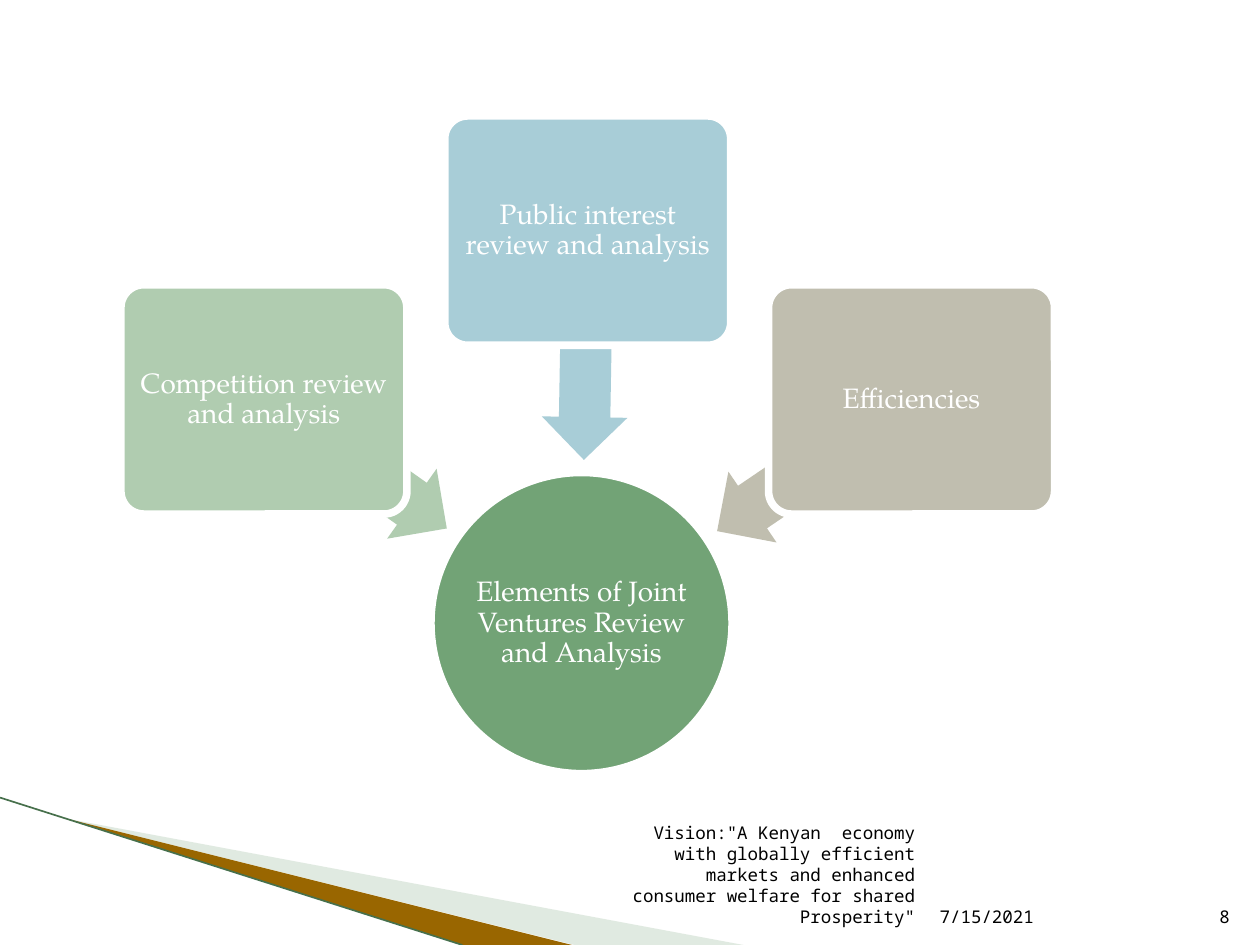
from lxml import etree
from pptx import Presentation
from pptx import util as u
from pptx.dml.color import RGBColor
from pptx.enum import shapes, text
from pptx.oxml.ns import qn

WHITE = RGBColor(0xFF, 0xFF, 0xFF)
BLACK = RGBColor(0, 0, 0)
HUB_GREEN = RGBColor(0x72, 0xA3, 0x76)
PALE_GREEN = RGBColor(0xB0, 0xCC, 0xB0)
BLUE = RGBColor(0xA8, 0xCD, 0xD7)
STONE = RGBColor(0xC0, 0xBE, 0xAF)
MIST = RGBColor(0xB3, 0xCB, 0xB5)
BROWN = RGBColor(0x99, 0x66, 0x00)
EDGE_GREEN = RGBColor(0x47, 0x70, 0x4C)
SERIF, MONO = "TeX Gyre Pagella", "Noto Sans Mono"


def inches(*lengths):
    """Convert numbers to inch lengths."""
    return [u.Inches(length) for length in lengths]


def write(frame, wording, inset, font, paragraph_format):
    """Fill a text frame with one formatted paragraph."""
    frame.word_wrap = True
    for side, gap in inset.items():
        setattr(frame, f"margin_{side}", u.Inches(gap))
    paragraph = frame.paragraphs[0]
    paragraph.text = wording
    for name, value in paragraph_format.items():
        setattr(paragraph, name, value)
    color = font.pop("color")
    for name, value in font.items():
        setattr(paragraph.font, name, value)
    paragraph.font.color.rgb = color


def add_filled(slide, preset, box, color):
    """Add a flat preset shape without an outline."""
    shape = slide.shapes.add_shape(preset, *inches(*box))
    shape.shadow.inherit = False
    shape.fill.solid()
    shape.fill.fore_color.rgb = color
    shape.line.fill.background()
    return shape


def add_node(slide, preset, box, color, wording, inset):
    """Add a white-rimmed shape with centred wording."""
    node = add_filled(slide, preset, box, color)
    node.line.color.rgb = WHITE
    node.line.width = u.Pt(4.33)
    node.text_frame.vertical_anchor = text.MSO_ANCHOR.MIDDLE
    write(node.text_frame, wording,
          dict.fromkeys(("left", "top", "right", "bottom"), inset),
          {"name": SERIF, "size": u.Pt(16), "color": WHITE},
          {"alignment": text.PP_ALIGN.CENTER, "line_spacing": 0.9})
    return node


def add_wedge(slide, points):
    """Add a closed outline through points given in inches."""
    corners = [inches(*point) for point in points]
    builder = slide.shapes.build_freeform(*corners[0], scale=1.0)
    builder.add_line_segments(corners[1:], close=True)
    wedge = builder.convert_to_shape()
    wedge.shadow.inherit = False
    wedge.fill.solid()
    wedge.line.fill.background()
    return wedge


def add_corner_sweep(slide, left, top, width, height):
    """Draw the corner wedges and their edge line."""
    bottom = top + height
    tip = (left + 0.54, top + 0.17)
    mist = add_wedge(slide, [tip, (left + width, bottom), (left + 4.56, bottom)])
    mist.fill.fore_color.rgb = MIST
    tint = mist.fill._xPr.find(qn("a:solidFill"))[0]
    etree.SubElement(tint, qn("a:alpha"), val="40000")
    brown = add_wedge(slide, [tip, (left + 4.54, bottom), (left + 3.67, bottom)])
    brown.fill.fore_color.rgb = BROWN
    edge = slide.shapes.add_connector(
        shapes.MSO_CONNECTOR.STRAIGHT, *inches(left, top, left + 3.67, bottom))
    edge.line.color.rgb = EDGE_GREEN
    edge.line.width = u.Pt(0.95)
    etree.SubElement(edge._element.spPr, qn("a:effectLst"))


def add_review_diagram(slide, left, top, width, height):
    """Draw three elements pointing at a central hub."""
    hub, card_width, card_height, arrow_height = 2.39, 2.27, 1.82, 0.68
    add_node(slide, shapes.MSO_SHAPE.OVAL,
             (left + 2.46, top + height - hub, hub, hub), HUB_GREEN,
             "Elements of Joint Ventures Review and Analysis", 0.01)
    elements = [
        ("Competition review and analysis", PALE_GREEN, 1.34, (0.97, 2.42, 1.78), 215.3),
        ("Public interest review and analysis", BLUE, 0, (2.78, 1.48, 1.82), 271),
        ("Efficiencies", STONE, 1.34, (4.57, 2.43, 1.87), 325.8),
    ]
    step = (width - card_width) / (len(elements) - 1)
    for index, (wording, color, drop, (x, y, length), angle) in enumerate(elements):
        arrow = add_filled(slide, shapes.MSO_SHAPE.LEFT_ARROW,
                           (left + x, top + y, length, arrow_height), color)
        arrow.adjustments[0], arrow.adjustments[1] = 0.6, 0.5
        arrow.rotation = angle
        card = add_node(slide, shapes.MSO_SHAPE.ROUNDED_RECTANGLE,
                        (left + index * step, top + drop, card_width, card_height),
                        color, wording, 0.03)
        card.adjustments[0] = 0.1


def add_footer(slide, left, top, width, height):
    """Place the vision, date and slide number side by side."""
    vision = ('Vision:"A Kenyan  economy with globally efficient markets '
              'and enhanced consumer welfare for shared Prosperity"')
    right, start = text.PP_ALIGN.RIGHT, text.PP_ALIGN.LEFT
    for wording, offset, span, alignment in (
            (vision, 0, 2.57, right),
            ("7/15/2021", 2.57, 2.1, start),
            ("8", 4.67, width - 4.67, right)):
        field = slide.shapes.add_textbox(*inches(left + offset, top, span, height))
        field.text_frame.vertical_anchor = text.MSO_ANCHOR.BOTTOM
        write(field.text_frame, wording, {},
              {"name": MONO, "size": u.Pt(10), "color": BLACK},
              {"alignment": alignment})


def main():
    """Build and save the slide."""
    deck = Presentation()
    deck.slide_width, deck.slide_height = inches(10, 7.5)
    slide = deck.slides.add_slide(deck.slide_layouts[6])
    add_corner_sweep(slide, 0, 6.33, 5.9, 1.17)
    add_review_diagram(slide, 0.96, 0.92, 7.41, 5.22)
    add_footer(slide, 4.79, 7.01, 5.07, 0.4)
    deck.save("out.pptx")


if __name__ == "__main__":
    main()
